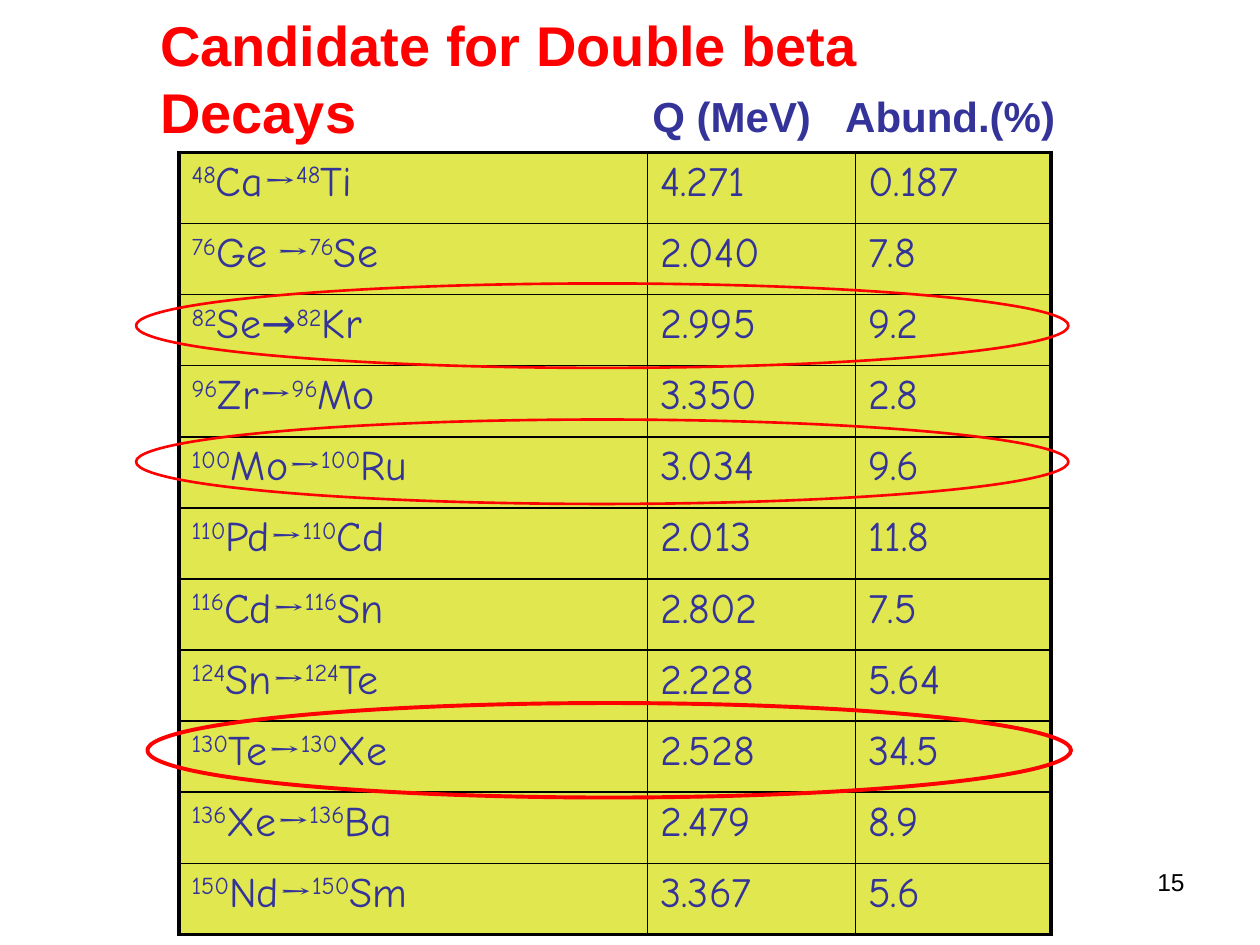
from lxml import etree
from pptx import Presentation
from pptx.dml.color import RGBColor
from pptx.enum.shapes import MSO_SHAPE
from pptx.enum.text import MSO_ANCHOR, MSO_AUTO_SIZE, PP_ALIGN
from pptx.oxml.ns import qn
from pptx.util import Inches, Pt

ELLIPSE = MSO_SHAPE.OVAL
TOP = MSO_ANCHOR.TOP
NO_AUTOFIT = MSO_AUTO_SIZE.NONE
LEFT, RIGHT = PP_ALIGN.LEFT, PP_ALIGN.RIGHT

RED = RGBColor(0xFF, 0x00, 0x00)
NAVY = RGBColor(0x33, 0x33, 0x99)
BLACK = RGBColor(0x00, 0x00, 0x00)
YELLOW = RGBColor(0xE0, 0xE7, 0x4F)

HEADING_FONT, TABLE_FONT, ARROW_FONT = "Arial", "Comic Neue", "Cambria"
THIN, THICK = 1, 2.25
COLUMN_WIDTHS = (3.72, 1.65, 1.55)
TABLE_HEIGHT = 6.21

# mass number, parent, arrow, daughter, Q (MeV), abundance (%)
DECAYS = (
    ("48", "Ca", "→", "Ti", "4.271", "0.187"),
    ("76", "Ge", " →", "Se", "2.040", "7.8"),
    ("82", "Se", "→", "Kr", "2.995", "9.2"),
    ("96", "Zr", "→", "Mo", "3.350", "2.8"),
    ("100", "Mo", "→", "Ru", "3.034", "9.6"),
    ("110", "Pd", "→", "Cd", "2.013", "11.8"),
    ("116", "Cd", "→", "Sn", "2.802", "7.5"),
    ("124", "Sn", "→", "Te", "2.228", "5.64"),
    ("130", "Te", "→", "Xe", "2.528", "34.5"),
    ("136", "Xe", "→", "Ba", "2.479", "8.9"),
    ("150", "Nd", "→", "Sm", "3.367", "5.6"),
)
COMIC_ARROW_PARENT = "Se"

# left, top, width, height, line width
HIGHLIGHTS = (
    (1.17, 5.58, 7.33, 0.75, 2.25),
    (1.08, 2.25, 7.4, 0.67, 1.5),
    (1.08, 3.33, 7.4, 0.67, 1.5),
)


def add_run(paragraph, text, font, size, color, bold=False, superscript=False):
    run = paragraph.add_run()
    run.text = text
    run.font.name = font
    run.font.size = Pt(size)
    run.font.color.rgb = color
    run.font.bold = bold
    if superscript:
        run._r.get_or_add_rPr().set("baseline", "30000")


def add_label(slide, left, top, width, height):
    """Add an empty wrapping text box and return its first paragraph."""
    frame = slide.shapes.add_textbox(
        Inches(left), Inches(top), Inches(width), Inches(height)).text_frame
    frame.word_wrap = True
    return frame.paragraphs[0]


def add_title(slide):
    title = slide.shapes.title
    title.left, title.top = Inches(1.17), Inches(0.03)
    title.width, title.height = Inches(7.2), Inches(0.63)
    frame = title.text_frame
    frame.word_wrap = True
    frame.auto_size = NO_AUTOFIT
    frame.vertical_anchor = TOP
    paragraph = frame.paragraphs[0]
    paragraph.alignment = LEFT
    add_run(paragraph, "Candidate for Double beta Decays",
            HEADING_FONT, 32, RED, bold=True)


def add_column_headings(slide):
    headings = add_label(slide, 5.08, 0.67, 3.6, 0.5)
    tabs = etree.SubElement(headings._p.get_or_add_pPr(), qn("a:tabLst"))
    etree.SubElement(tabs, qn("a:tab"), pos=str(Inches(1.53)), algn="l")
    add_run(headings, "Q (MeV)\tAbund.(%)", HEADING_FONT, 24, NAVY, bold=True)


def set_borders(cell, widths):
    """Draw the cell's borders; widths maps a side (L, R, T, B) to points."""
    properties = cell._tc.get_or_add_tcPr()
    for position, (side, width) in enumerate(widths.items()):
        border = etree.Element(qn(f"a:ln{side}"), w=str(Pt(width)))
        fill = etree.SubElement(border, qn("a:solidFill"))
        etree.SubElement(fill, qn("a:srgbClr"), val=str(BLACK))
        properties.insert(position, border)


def write_decay(paragraph, mass, parent, arrow, daughter):
    arrow_font = TABLE_FONT if parent == COMIC_ARROW_PARENT else ARROW_FONT
    add_run(paragraph, mass, TABLE_FONT, 24, NAVY, superscript=True)
    add_run(paragraph, parent, TABLE_FONT, 24, NAVY)
    add_run(paragraph, arrow, arrow_font, 24, NAVY)
    add_run(paragraph, mass, TABLE_FONT, 24, NAVY, superscript=True)
    add_run(paragraph, daughter, TABLE_FONT, 24, NAVY)


def add_decay_table(slide):
    last_row, last_column = len(DECAYS) - 1, len(COLUMN_WIDTHS) - 1
    table = slide.shapes.add_table(
        len(DECAYS), len(COLUMN_WIDTHS), Inches(1.42), Inches(1.21),
        Inches(sum(COLUMN_WIDTHS)), Inches(TABLE_HEIGHT)).table
    table.first_row = table.horz_banding = False
    for column, width in zip(table.columns, COLUMN_WIDTHS):
        column.width = Inches(width)
    for r, (*decay, q_value, abundance) in enumerate(DECAYS):
        table.rows[r].height = Inches(TABLE_HEIGHT / len(DECAYS))
        write_decay(table.cell(r, 0).text_frame.paragraphs[0], *decay)
        for c, value in enumerate((q_value, abundance), start=1):
            add_run(table.cell(r, c).text_frame.paragraphs[0], value,
                    TABLE_FONT, 24, NAVY)
        for c in range(len(COLUMN_WIDTHS)):
            cell = table.cell(r, c)
            cell.fill.solid()
            cell.fill.fore_color.rgb = YELLOW
            set_borders(cell, {
                "L": THICK if c == 0 else THIN,
                "R": THICK if c == last_column else THIN,
                "T": THICK if r == 0 else THIN,
                "B": THICK if r == last_row else THIN,
            })


def add_highlight(slide, left, top, width, height, line_width):
    ring = slide.shapes.add_shape(
        ELLIPSE, Inches(left), Inches(top), Inches(width), Inches(height))
    ring.shadow.inherit = False
    ring.fill.background()
    ring.line.color.rgb = RED
    ring.line.width = Pt(line_width)


def add_slide_number(slide):
    number = add_label(slide, 7.17, 6.83, 2.33, 0.52)
    number.alignment = RIGHT
    add_run(number, "15", HEADING_FONT, 14, BLACK)


def main():
    presentation = Presentation()
    presentation.slide_width = Inches(10)
    presentation.slide_height = Inches(7.5)
    slide = presentation.slides.add_slide(presentation.slide_layouts[5])
    add_decay_table(slide)
    add_title(slide)
    add_column_headings(slide)
    for highlight in HIGHLIGHTS:
        add_highlight(slide, *highlight)
    add_slide_number(slide)
    presentation.save("out.pptx")


if __name__ == "__main__":
    main()
